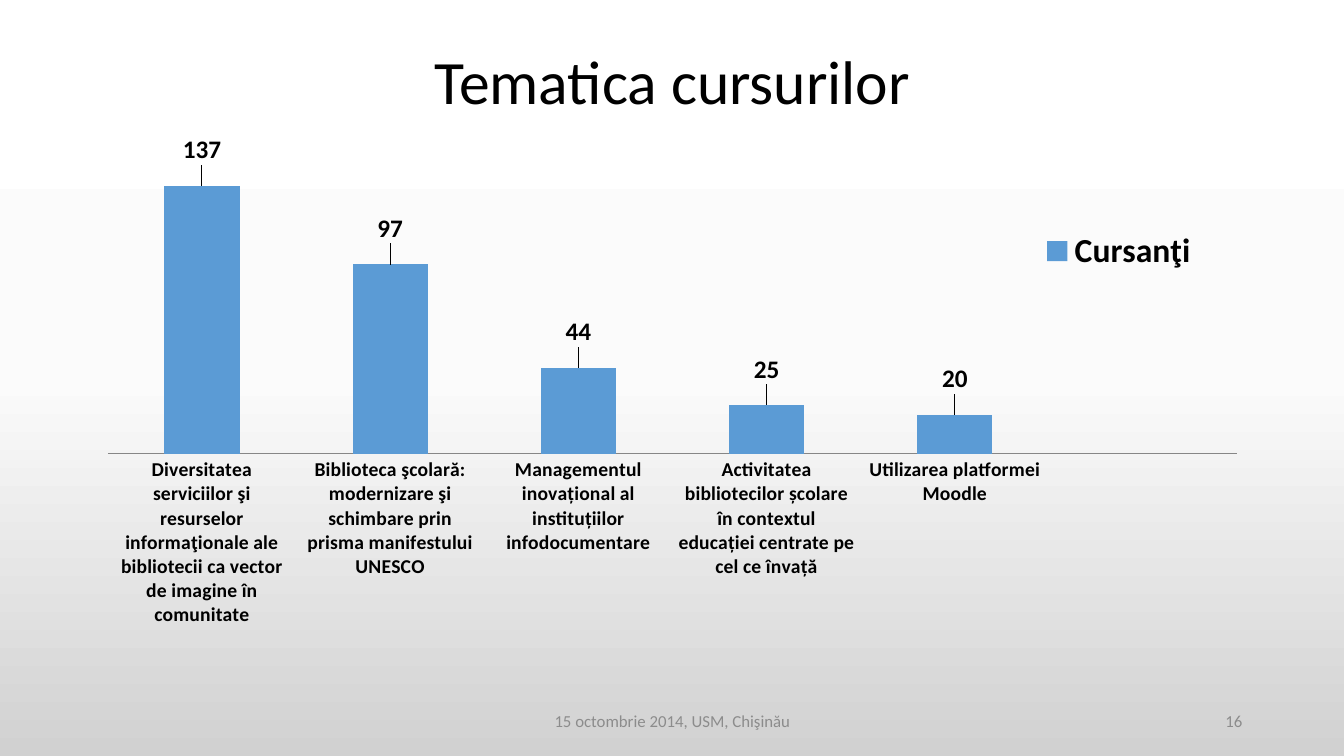
from copy import deepcopy
from lxml import etree
from pptx import Presentation
from pptx import util as u
from pptx.chart import data
from pptx.dml import color
from pptx.enum import chart as ec, text as et
from pptx.oxml import ns


def paint(font, **spec):
    hue = spec.pop("hue")
    for key, val in spec.items():
        setattr(font, key, val)
    font.color.rgb = color.RGBColor.from_string(hue)


def place(node, spot, **vals):
    for old in node.findall(ns.qn("c:layout")):
        node.remove(old)
    lay = etree.Element(ns.qn("c:layout"))
    man = etree.SubElement(lay, ns.qn("c:manualLayout"))
    for key, val in vals.items():
        etree.SubElement(man, ns.qn("c:" + key)).set("val", str(val))
    node.insert(spot, lay)


deck = Presentation()
deck.slide_width, deck.slide_height = u.Inches(13.33), u.Inches(7.5)
slide = deck.slides.add_slide(deck.slide_layouts[5])

fill = slide.background.fill
fill.gradient()
fill.gradient_angle = 270
stops = fill.gradient_stops
first = stops[0]._gs
first.addnext(deepcopy(first))
for stop, (pos, hue) in zip(fill.gradient_stops, [(0, "FFFFFF"), (0.5, "FBFBFB"), (1, "D1D1D1")]):
    stop.position = pos
    stop.color.rgb = color.RGBColor.from_string(hue)

title = slide.shapes.title
foot = slide.shapes.add_textbox(0, 0, 0, 0)
page = slide.shapes.add_textbox(0, 0, 0, 0)
mid, right = et.PP_ALIGN.CENTER, et.PP_ALIGN.RIGHT
for box, words, spot, side, size, hue in [
    (title, "Tematica cursurilor", (0.92, 0.4, 11.5, 0.88), mid, 44, "000000"),
    (foot, "15 octombrie 2014, USM, Chişinău", (4.42, 6.95, 4.5, 0.4), mid, 12, "8C8C8C"),
    (page, "16", (9.42, 6.95, 3, 0.4), right, 12, "8C8C8C"),
]:
    box.left, box.top, box.width, box.height = map(u.Inches, spot)
    frame = box.text_frame
    frame.text = words
    frame.word_wrap = True
    frame.vertical_anchor = et.MSO_ANCHOR.MIDDLE
    para = frame.paragraphs[0]
    para.alignment = side
    paint(para.runs[0].font, name="Calibri", size=u.Pt(size), hue=hue)
title.text_frame.paragraphs[0].line_spacing = 0.9

themes = data.CategoryChartData()
themes.categories = [
    "Diversitatea serviciilor şi resurselor informaţionale ale bibliotecii ca vector de imagine în comunitate",
    "Biblioteca şcolară: modernizare şi schimbare prin prisma manifestului UNESCO",
    "Managementul inovațional al instituțiilor infodocumentare",
    "Activitatea bibliotecilor școlare în contextul educației centrate pe cel ce învață",
    "Utilizarea platformei Moodle",
    "",
]
counts = [137, 97, 44, 25, 20, None]
themes.add_series("Cursanţi", counts)
spot = map(u.Inches, (0.92, 1.22, 11.5, 5.53))
chart = slide.shapes.add_chart(ec.XL_CHART_TYPE.COLUMN_CLUSTERED, *spot, themes).chart
chart.has_title = False
paint(chart.font, name="Calibri", size=u.Pt(10), hue="000000")
area = chart.element.find(".//" + ns.qn("c:plotArea"))
place(area, 0, layoutTarget="inner", xMode="edge", yMode="edge", x=0.013, y=0.032, w=0.974, h=0.562)

chart.has_legend = True
key = chart.legend
key.position = ec.XL_LEGEND_POSITION.TOP
key.include_in_layout = False
paint(key.font, name="Calibri", size=u.Pt(24), bold=True, hue="000000")
place(key._element, 1, xMode="edge", yMode="edge", x=0.81, y=0.19, w=0.15, h=0.08)

cats = chart.category_axis
cats.major_tick_mark = ec.XL_TICK_MARK.NONE
cats.format.line.color.rgb = color.RGBColor.from_string("868686")
paint(cats.tick_labels.font, name="Calibri", size=u.Pt(14), bold=True, hue="000000")
vals = chart.value_axis
for name, val in {"visible": False, "has_major_gridlines": False,
                  "minimum_scale": 0, "maximum_scale": 160}.items():
    setattr(vals, name, val)

plot = chart.plots[0]
plot.gap_width = 150
plot.vary_by_categories = False
bars = plot.series[0]
bars.format.fill.solid()
bars.format.fill.fore_color.rgb = color.RGBColor.from_string("5B9BD5")
bars.data_labels.show_value = True
for i in range(5):
    label = bars.points[i].data_label
    paint(label.font, name="Calibri", size=u.Pt(18), bold=True, hue="000000")
    label.position = ec.XL_LABEL_POSITION.OUTSIDE_END
for node in chart.element.iter(ns.qn("c:dLbl")):
    place(node, 1, x=0, y=-0.03)

deck.save("out.pptx")
